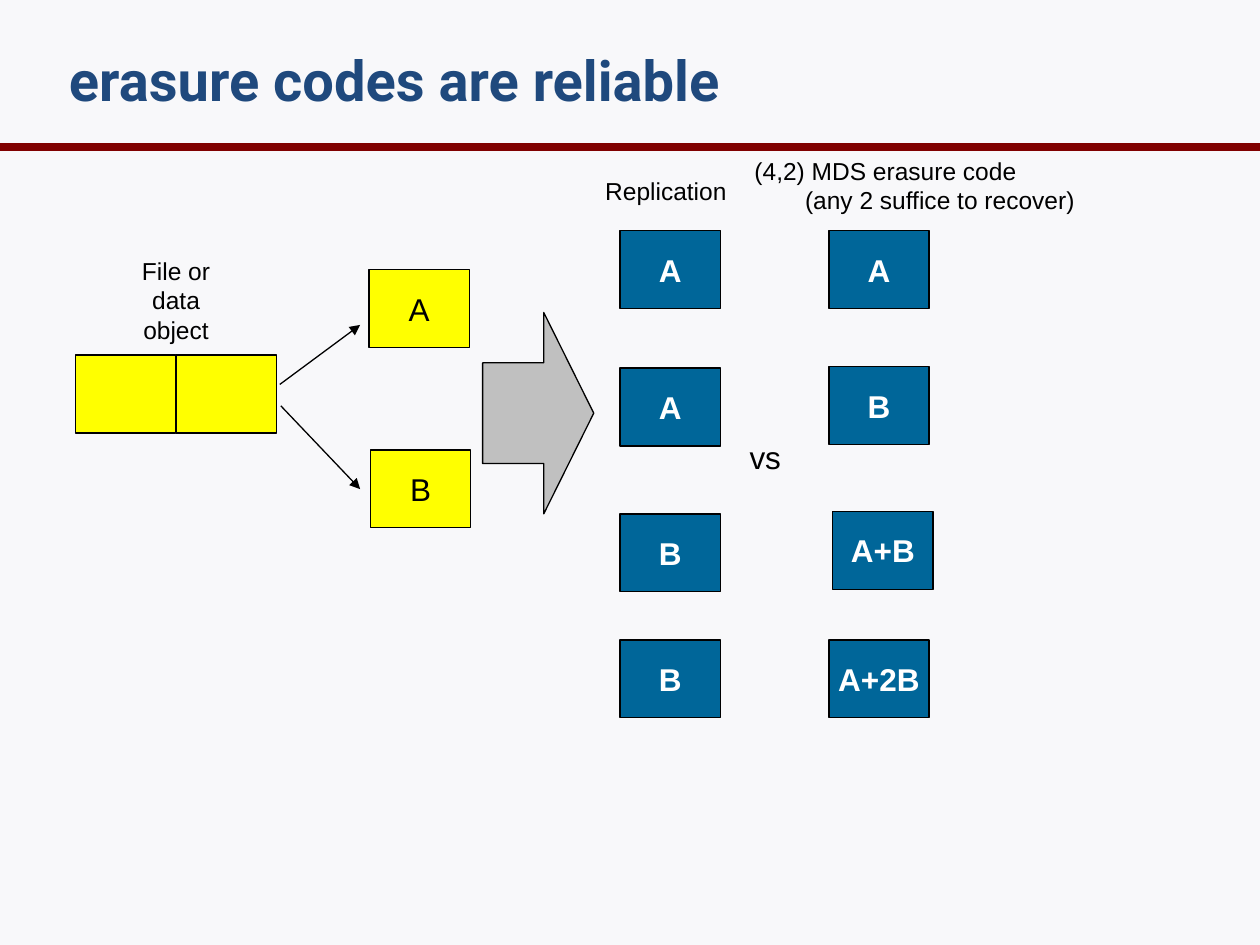
"""Build the slide that compares replication with an erasure code."""
from lxml.etree import SubElement as Sub
from pptx import Presentation
from pptx.dml.color import RGBColor
from pptx.enum.shapes import MSO_CONNECTOR as Link, MSO_SHAPE as Form
from pptx.enum.text import MSO_ANCHOR as Anchor, PP_ALIGN as Align
from pptx.oxml.ns import qn
from pptx.util import Cm, Pt

BLACK, WHITE, YELLOW, BLUE = "000000", "FFFFFF", "FFFF00", "006699"
GREY, RED, NAVY, PAPER = "C0C0C0", "800000", "1F497D", "F8F8FA"
SIZE = 2.02, 1.57
PLAIN = dict(name="Arial", size=Pt(18), bold=False)
BOLD = dict(PLAIN, bold=True)
SMALL = dict(PLAIN, size=Pt(14))
HEAD = dict(name="Roboto", size=Pt(32), bold=True)
MID = dict(vertical_anchor=Anchor.MIDDLE, word_wrap=False)
WRAP = dict(vertical_anchor=Anchor.TOP, word_wrap=True)

PARTS = [("", 1.52, 7.16), ("", 3.55, 7.16), ("A", 7.44, 5.44), ("B", 7.47, 9.07)]
COPIES = [("A", 12.5, 4.65), ("A", 12.5, 7.42), ("B", 12.5, 10.36), ("B", 12.5, 12.9)]
CODES = [("A", 16.71, 4.65), ("B", 16.71, 7.39),
         ("A+B", 16.79, 10.31), ("A+2B", 16.71, 12.9)]
GROUPS = [(PARTS, YELLOW, BLACK, PLAIN), (COPIES + CODES, BLUE, WHITE, BOLD)]
TEXTS = [
    ([("erasure codes are reliable", Align.LEFT)], (1.14, 0, 23.6, 3.18),
     HEAD, NAVY, dict(WRAP, vertical_anchor=Anchor.MIDDLE)),
    ([("Replication", Align.CENTER)], (11.61, 3.43, 3.63, 0.86), SMALL, BLACK, WRAP),
    ([("(4,2) MDS erasure code", Align.LEFT),
      ("(any 2 suffice to recover)", Align.RIGHT)],
     (14.96, 3.02, 7.04, 1.45), SMALL, BLACK, dict(WRAP, margin_right=Cm(0.33))),
    ([("File or data object", Align.CENTER)], (2.13, 5.03, 2.84, 2.06),
     SMALL, BLACK, WRAP),
    ([("vs", Align.LEFT)], (14.86, 8.71, 1.96, 1.3), PLAIN, BLACK, WRAP),
]
LINES = [((0, 2.97, 25.4, 2.97), RED, 4.5, False),
         ((5.64, 7.75, 7.26, 6.55), BLACK, 0.75, True),
         ((5.66, 8.18, 7.26, 9.86), BLACK, 0.75, True)]


def put(item, vals):
    for key, val in vals.items():
        setattr(item, key, val)


def paint(fill, hue):
    fill.solid()
    fill.fore_color.rgb = RGBColor.from_string(hue)


def write(shape, rows, font, hue, frame):
    text = shape.text_frame
    put(text, frame)
    for num, (words, align) in enumerate(rows):
        para = text.add_paragraph() if num else text.paragraphs[0]
        put(para, dict(text=words, alignment=align))
        put(para.font, font)
        paint(para.font.fill, hue)


def draw(form, area, hue):
    shape = slide.shapes.add_shape(form, *map(Cm, area))
    shape.shadow.inherit = False
    paint(shape.fill, hue)
    paint(shape.line.fill, BLACK)
    shape.line.width = Pt(0.75)
    return shape


def join(ends, hue, width, tip):
    line = slide.shapes.add_connector(Link.STRAIGHT, *map(Cm, ends))
    paint(line.line.fill, hue)
    line.line.width = Pt(width)
    if tip:
        Sub(line.line._get_or_add_ln(), qn("a:tailEnd"), type="triangle")
    Sub(line._element.spPr, qn("a:effectLst"))


deck = Presentation()
put(deck, dict(slide_width=Cm(25.4), slide_height=Cm(19.05)))
slide = deck.slides.add_slide(deck.slide_layouts[6])
paint(slide.background.fill, PAPER)

for line in LINES:
    join(*line)
for boxes, hue, ink, font in GROUPS:
    for word, left, top in boxes:
        box = draw(Form.RECTANGLE, (left, top, *SIZE), hue)
        if word:
            write(box, [(word, Align.CENTER)], font, ink, MID)
arrow = draw(Form.RIGHT_ARROW, (9.73, 6.3, 2.24, 4.06), GREY)
arrow.adjustments[0], arrow.adjustments[1] = 0.5, 0.45
for rows, area, font, hue, frame in TEXTS:
    write(slide.shapes.add_textbox(*map(Cm, area)), rows, font, hue, frame)

deck.save("out.pptx")
